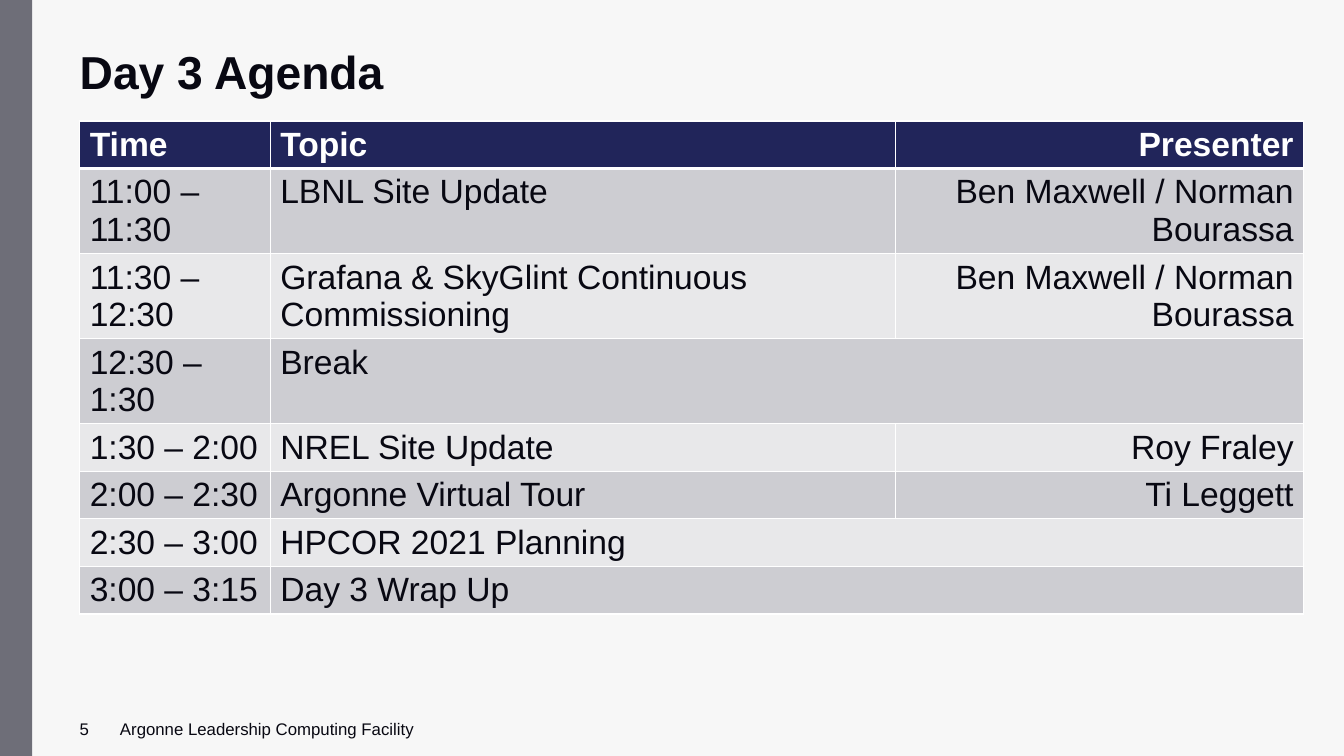
from lxml import etree
from pptx import Presentation
from pptx.dml.color import RGBColor
from pptx.enum.shapes import MSO_SHAPE
from pptx.enum.text import MSO_ANCHOR, MSO_AUTO_SIZE, PP_ALIGN
from pptx.oxml.ns import qn
from pptx.util import Inches, Pt

RECT = MSO_SHAPE.RECTANGLE
TOP, BOTTOM = MSO_ANCHOR.TOP, MSO_ANCHOR.BOTTOM
NO_FIT = MSO_AUTO_SIZE.NONE
LEFT, RIGHT = PP_ALIGN.LEFT, PP_ALIGN.RIGHT

PAPER = RGBColor(0xF7, 0xF7, 0xF7)
GREY = RGBColor(0x6E, 0x6E, 0x78)
INK = RGBColor(0x08, 0x08, 0x12)
WHITE = RGBColor(0xFF, 0xFF, 0xFF)
NAVY = RGBColor(0x21, 0x25, 0x5A)
BANDS = (RGBColor(0xE8, 0xE8, 0xEA), RGBColor(0xCD, 0xCD, 0xD2))

TITLE = {"name": "Arial", "size": Pt(33), "bold": True}
HEAD = {"name": "Arial", "size": Pt(24), "bold": True}
BODY = {"name": "Arial", "size": Pt(24), "bold": False}
FOOT = {"name": "Arial", "size": Pt(12), "bold": False}
FRAME = {"margin_left": 0, "margin_right": 0, "margin_top": 0,
         "margin_bottom": 0, "word_wrap": True, "auto_size": NO_FIT}

COLS = (1.89, 6.2, 4.05)
AGENDA = (
    ("Time", "Topic", "Presenter"),
    ("11:00 – 11:30", "LBNL Site Update", "Ben Maxwell / Norman Bourassa"),
    ("11:30 – 12:30", "Grafana & SkyGlint Continuous Commissioning",
     "Ben Maxwell / Norman Bourassa"),
    ("12:30 – 1:30", "Break"),
    ("1:30 – 2:00", "NREL Site Update", "Roy Fraley"),
    ("2:00 – 2:30", "Argonne Virtual Tour", "Ti Leggett"),
    ("2:30 – 3:00", "HPCOR 2021 Planning"),
    ("3:00 – 3:15", "Day 3 Wrap Up"),
)


def apply(target, values):
    """Set each named attribute on the target."""
    for name, value in values.items():
        setattr(target, name, value)


def write(frame, text, style, color, align=LEFT):
    """Put one styled paragraph in a text frame."""
    frame.text = text
    para = frame.paragraphs[0]
    para.alignment = align
    apply(para.font, style)
    para.font.color.rgb = color


def add_title(slide, left, top, width, height):
    """Place and format the title placeholder."""
    title = slide.shapes.title
    apply(title, {"left": Inches(left), "top": Inches(top),
                  "width": Inches(width), "height": Inches(height)})
    apply(title.text_frame, FRAME | {"vertical_anchor": TOP})
    write(title.text_frame, "Day 3 Agenda", TITLE, INK)


def add_bar(slide, left, top, width, height):
    """Draw the side bar."""
    bar = slide.shapes.add_shape(RECT, Inches(left), Inches(top),
                                 Inches(width), Inches(height))
    bar.shadow.inherit = False
    bar.fill.solid()
    bar.fill.fore_color.rgb = GREY
    bar.line.fill.background()


def add_footer(slide, left, top, width, height):
    """Place the page number and the facility name."""
    indent = 0.4
    for text, shift, room in (
            ("5", 0, indent),
            ("Argonne Leadership Computing Facility", indent, width - indent)):
        box = slide.shapes.add_textbox(Inches(left + shift), Inches(top),
                                       Inches(room), Inches(height))
        apply(box.text_frame, FRAME | {"vertical_anchor": BOTTOM})
        write(box.text_frame, text, FOOT, INK)


def add_rules(cell, row):
    """Draw white cell borders, thick below the header."""
    props = cell._tc.get_or_add_tcPr()
    for side in "LRTB":
        thick = (row, side) in ((0, "B"), (1, "T"))
        line = etree.SubElement(props, qn(f"a:ln{side}"),
                                w=str(Pt(3 if thick else 1)))
        fill = etree.SubElement(line, qn("a:solidFill"))
        etree.SubElement(fill, qn("a:srgbClr"), val=str(WHITE))


def add_agenda(slide, left, top, width, height):
    """Build the agenda table, merging rows that lack a presenter."""
    table = slide.shapes.add_table(len(AGENDA), len(COLS), Inches(left),
                                   Inches(top), Inches(width),
                                   Inches(height)).table
    for col, size in zip(table.columns, COLS):
        col.width = Inches(size)
    for r, entry in enumerate(AGENDA):
        style, ink, fill = ((BODY, INK, BANDS[r % 2]) if r
                            else (HEAD, WHITE, NAVY))
        for c in range(len(COLS)):
            cell = table.cell(r, c)
            add_rules(cell, r)
            cell.fill.solid()
            cell.fill.fore_color.rgb = fill
            if c < len(entry):
                write(cell.text_frame, entry[c], style, ink,
                      RIGHT if c == 2 else LEFT)
        if len(entry) < len(COLS):
            table.cell(r, 1).merge(table.cell(r, 2))


def main():
    """Build and save the agenda slide."""
    deck = Presentation()
    deck.slide_width, deck.slide_height = Inches(13.33), Inches(7.5)
    slide = deck.slides.add_slide(deck.slide_layouts[5])
    slide.background.fill.solid()
    slide.background.fill.fore_color.rgb = PAPER
    add_footer(slide, 0.79, 7.13, 5.32, 0.2)
    add_bar(slide, 0, 0, 0.32, 7.5)
    add_title(slide, 0.79, 0.43, 12.14, 0.57)
    add_agenda(slide, 0.79, 1.2, sum(COLS), 0.41 * len(AGENDA))
    deck.save("out.pptx")


if __name__ == "__main__":
    main()
